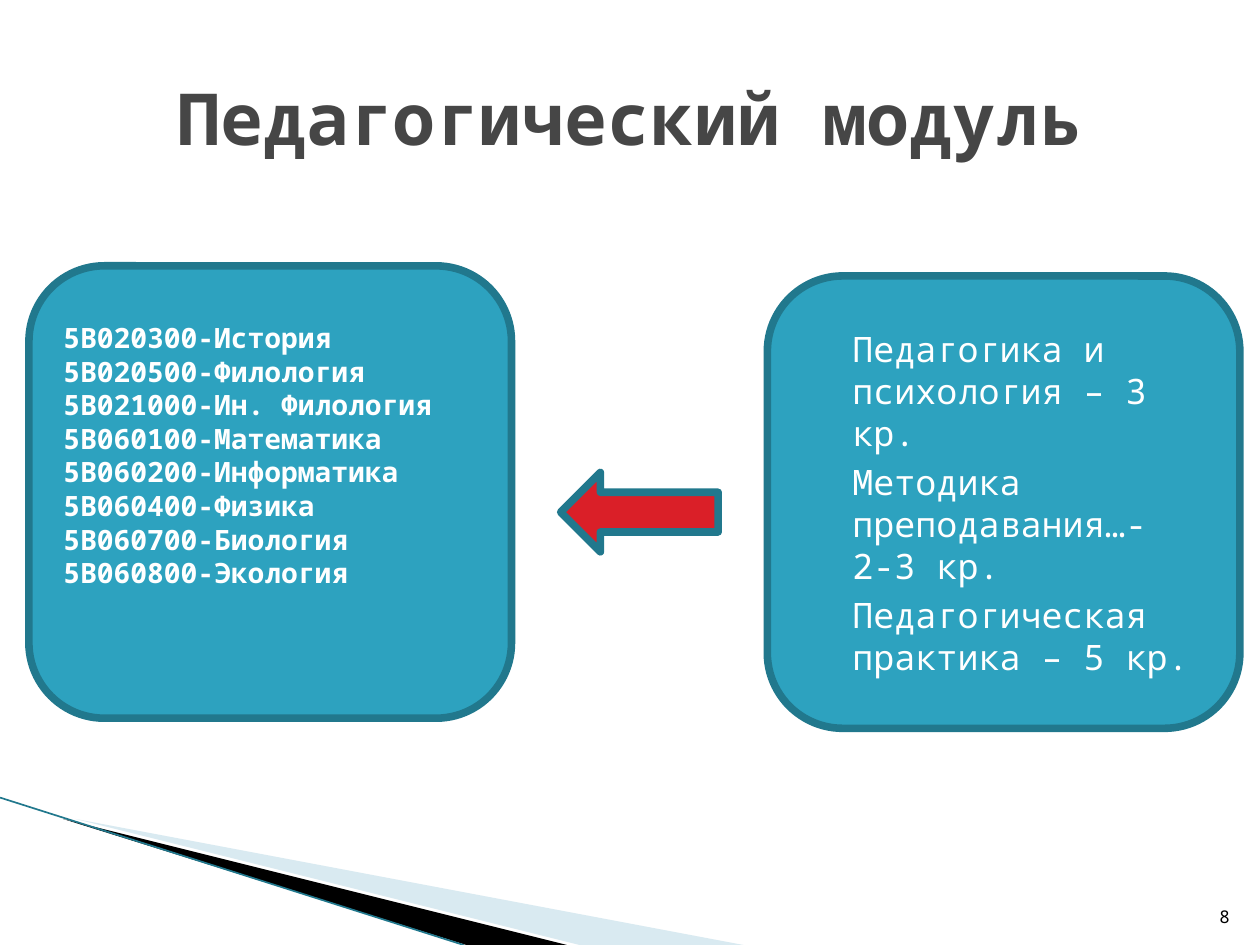
import pptx
import pptx.util
import pptx.dml.color
import pptx.enum.shapes
import pptx.enum.text
import lxml.etree

Pt = pptx.util.Pt
SHAPE = pptx.enum.shapes.MSO_SHAPE
ALIGN = pptx.enum.text.PP_ALIGN
ANCHOR = pptx.enum.text.MSO_ANCHOR
FONT = "Noto Sans Mono"
NS = "http://schemas.openxmlformats.org/drawingml/2006/main"

prs = pptx.Presentation()
prs.slide_width = pptx.util.Inches(10)
prs.slide_height = pptx.util.Inches(7.5)
# Grid of 100 columns by 75 rows
col = prs.slide_width // 100
row = prs.slide_height // 75
s = prs.slides.add_slide(prs.slide_layouts[1])


def paint(fmt, color):
    """Solid colour for a fill, a line's fill or a font's fill."""
    fmt.solid()
    fmt.fore_color.rgb = pptx.dml.color.RGBColor.from_string(color)


def write(tf, lines, size, color, bold=False, align=ALIGN.LEFT, anchor=ANCHOR.MIDDLE):
    """Fill a text frame with one paragraph per line."""
    tf.word_wrap = True
    tf.auto_size = pptx.enum.text.MSO_AUTO_SIZE.NONE
    tf.vertical_anchor = anchor
    tf.text = "\n".join(lines)
    for p in tf.paragraphs:
        p.alignment = align
        for r in p.runs:
            r.font.name, r.font.size, r.font.bold = FONT, Pt(size), bold
            paint(r.font.fill, color)


# Corner decoration: pale and black wedges, thin edge line
wedges = [
    ("A0CBDC", 40, [(5.5, 65), (59.2, 75), (45.6, 75)]),
    ("000000", 100, [(5.3, 64.9), (45.4, 75), (37, 75)]),
]
for color, opacity, points in wedges:
    start, *rest = points
    fb = s.shapes.build_freeform(*start, scale=(col, row))
    fb.add_line_segments(rest, close=True)
    sp = fb.convert_to_shape()
    sp.shadow.inherit = False
    paint(sp.fill, color)
    sp.line.fill.background()
    if opacity < 100:
        clr = sp.fill._xPr.find(f".//{{{NS}}}srgbClr")
        lxml.etree.SubElement(clr, f"{{{NS}}}alpha", val=str(opacity * 1000))

edge = s.shapes.add_connector(
    pptx.enum.shapes.MSO_CONNECTOR.STRAIGHT,
    0, int(63.3 * row), int(36.8 * col), 75 * row)
edge.line.width = Pt(0.95)
paint(edge.line.fill, "21788D")
lxml.etree.SubElement(edge._element.spPr, f"{{{NS}}}effectLst")

# Title
title = s.shapes.title
title.left, title.top, title.width, title.height = 5 * col, 3 * row, 90 * col, int(12.5 * row)
write(title.text_frame, ["Педагогический модуль"], 41, "464646", True, ALIGN.CENTER)

# Specialities on the left
left = s.shapes.add_shape(
    SHAPE.ROUNDED_RECTANGLE,
    int(2.3 * col), int(21.1 * row), int(38.3 * col), int(35.9 * row))
write(left.text_frame, [
    "5В020300-История",
    "5В020500-Филология",
    "5В021000-Ин. Филология",
    "5В060100-Математика",
    "5В060200-Информатика",
    "5В060400-Физика",
    "5В060700-Биология",
    "5В060800-Экология",
], 16, "FFFFFF", bold=True, anchor=ANCHOR.TOP)
left.text_frame.margin_top = int(2.6 * row)

# Courses on the right, in the body placeholder
body = s.placeholders[1]
body.left, body.top = int(60.9 * col), int(21.9 * row)
body.width, body.height = int(37.5 * col), int(35.9 * row)
geom = lxml.etree.SubElement(body._element.spPr, f"{{{NS}}}prstGeom", prst="roundRect")
lxml.etree.SubElement(geom, f"{{{NS}}}avLst")
write(body.text_frame, [
    "Педагогика и психология – 3 кр.",
    "Методика преподавания…- 2-3 кр.",
    "Педагогическая практика – 5 кр.",
], 20, "FFFFFF")
for i, p in enumerate(body.text_frame.paragraphs):
    p.space_before = Pt(4 if i else 0)
    pPr = p._p.get_or_add_pPr()
    pPr.set("marL", str(4 * col))
    pPr.set("indent", "0")
    lxml.etree.SubElement(pPr, f"{{{NS}}}buNone")

# Arrow from courses to specialities
arrow = s.shapes.add_shape(
    SHAPE.LEFT_ARROW,
    int(44.5 * col), int(37.5 * row), int(12.5 * col), int(6.3 * row))

# Common look of the boxes and the arrow
for sp, color in [(left, "2DA2BF"), (body, "2DA2BF"), (arrow, "DA1F28")]:
    paint(sp.fill, color)
    paint(sp.line.fill, "21788D")
    sp.line.width = Pt(4.33)
    if sp is not body:
        sp.shadow.inherit = False

# Slide number
num = s.shapes.add_textbox(int(94.6 * col), int(70.1 * row), 4 * col, 4 * row)
write(num.text_frame, ["8"], 10, "000000", align=ALIGN.RIGHT, anchor=ANCHOR.BOTTOM)

prs.save("out.pptx")
